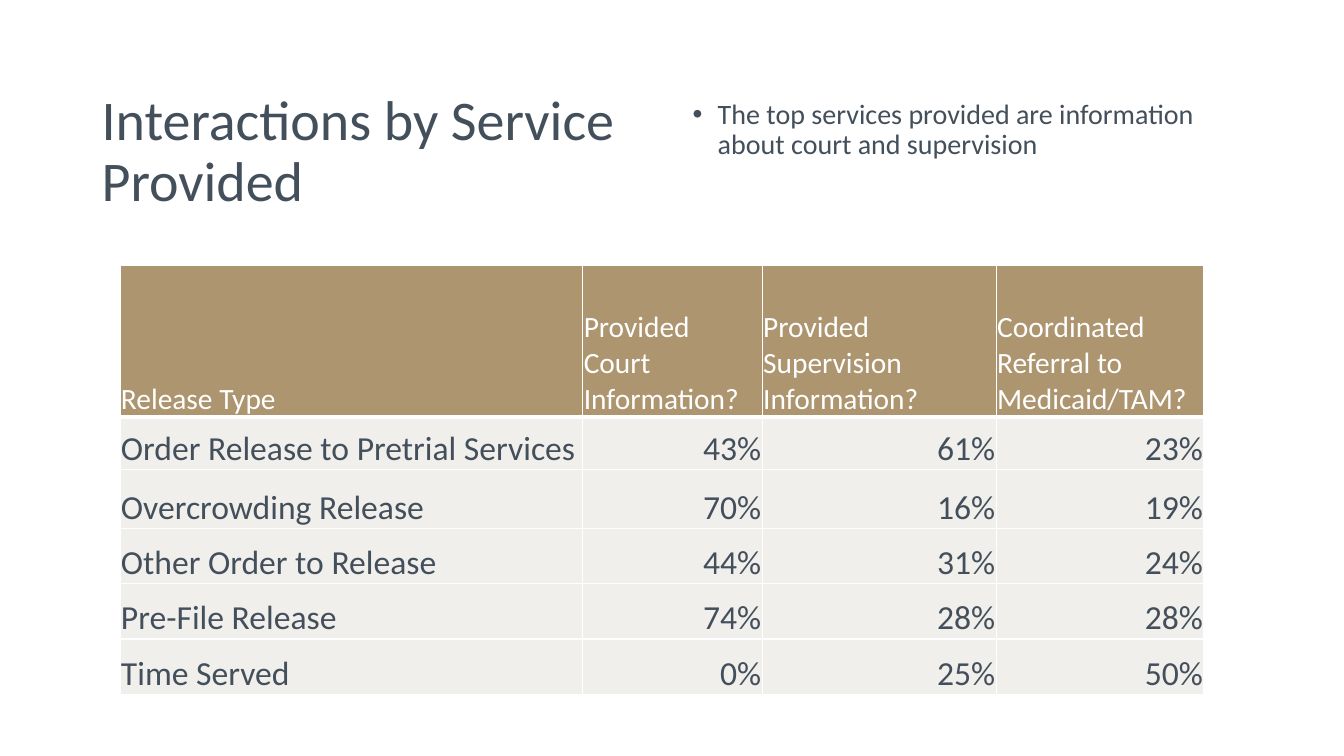
"""Build the slide on interactions by service provided."""
from lxml import etree
from pptx import Presentation
from pptx.dml.color import RGBColor
from pptx.enum import text as t
from pptx.oxml import ns
from pptx.util import Inches, Pt

SLATE = RGBColor(0x43, 0x4F, 0x5B)
TAN = RGBColor(0xAC, 0x95, 0x6F)
PALE = RGBColor(0xF1, 0xEF, 0xEB)
WHITE = RGBColor(0xFF, 0xFF, 0xFF)


def write(para, words, size, color):
    run = para.add_run()
    run.text = words
    run.font.name = "Calibri"
    run.font.size = Pt(size)
    run.font.color.rgb = color


def edge(cell, side, width):
    line = etree.SubElement(cell._tc.get_or_add_tcPr(), ns.qn("a:ln" + side), w=str(Pt(width)))
    fill = etree.SubElement(line, ns.qn("a:solidFill"))
    etree.SubElement(fill, ns.qn("a:srgbClr"), val=str(WHITE))


deck = Presentation()
deck.slide_width = Inches(13.33)
deck.slide_height = Inches(7.5)
slide = deck.slides.add_slide(deck.slide_layouts[6])

paras = []
for left, words, size in (
    (0.91, "Interactions by Service Provided", 40),
    (6.77, "The top services provided are information about court and supervision", 20),
):
    box = slide.shapes.add_textbox(Inches(left), Inches(0.6), Inches(5.65), Inches(1.83))
    frame = box.text_frame
    frame.word_wrap = True
    frame.vertical_anchor = t.MSO_ANCHOR.MIDDLE
    para = frame.paragraphs[0]
    para.line_spacing = 0.9
    write(para, words, size, SLATE)
    paras.append(para)

frame.margin_bottom = Inches(0.49)
point = paras[1]
point.space_before = Pt(10)
props = point._p.get_or_add_pPr()
props.set("marL", str(Inches(0.25)))
props.set("indent", str(Inches(-0.25)))
etree.SubElement(props, ns.qn("a:buFont"), typeface="Arial")
etree.SubElement(props, ns.qn("a:buChar"), char="•")

rows = [
    ("Release Type", "Provided Court Information?", "Provided Supervision Information?",
     "Coordinated Referral to Medicaid/TAM?"),
    ("Order Release to Pretrial Services", "43%", "61%", "23%"),
    ("Overcrowding Release", "70%", "16%", "19%"),
    ("Other Order to Release", "44%", "31%", "24%"),
    ("Pre-File Release", "74%", "28%", "28%"),
    ("Time Served", "0%", "25%", "50%"),
]
widths = (4.59, 1.78, 2.32, 2.06)
heights = (1.51, 0.52, 0.58, 0.55, 0.55, 0.55)
grid = slide.shapes.add_table(len(rows), len(widths), Inches(1.19), Inches(2.63),
                              Inches(10.76), Inches(4.27)).table
for col, width in zip(grid.columns, widths):
    col.width = Inches(width)
for row, height in zip(grid.rows, heights):
    row.height = Inches(height)

for r, row in enumerate(rows):
    head = r == 0
    for c, words in enumerate(row):
        cell = grid.cell(r, c)
        cell.margin_left = cell.margin_right = cell.margin_top = Inches(0.01)
        cell.margin_bottom = 0
        cell.vertical_anchor = t.MSO_ANCHOR.BOTTOM
        for side in "LRTB":
            thick = (head and side == "B") or (r == 1 and side == "T")
            edge(cell, side, 3 if thick else 1)
        cell.fill.solid()
        cell.fill.fore_color.rgb = TAN if head else PALE
        para = cell.text_frame.paragraphs[0]
        if c and not head:
            para.alignment = t.PP_ALIGN.RIGHT
        write(para, words, 21 if head else 24, WHITE if head else SLATE)

deck.save("out.pptx")
